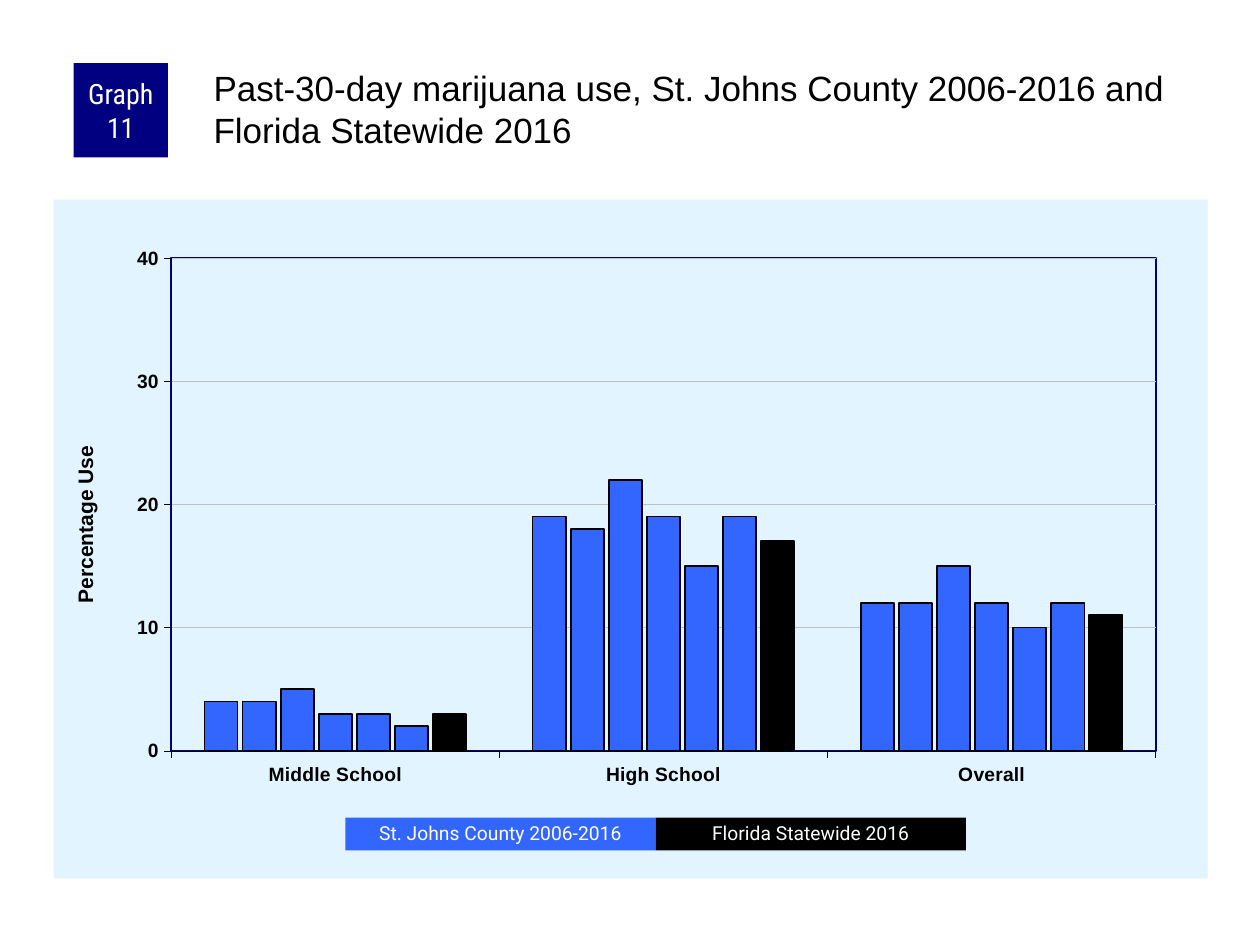
from dataclasses import dataclass

from lxml.etree import SubElement, fromstring
from pptx import Presentation
from pptx.chart.data import CategoryChartData as Data
from pptx.dml.color import RGBColor as Rgb
from pptx.enum.chart import XL_CHART_TYPE as Kind, XL_TICK_MARK as Tick
from pptx.enum.shapes import MSO_SHAPE as Form
from pptx.enum.text import MSO_ANCHOR as Anchor, MSO_AUTO_SIZE as Auto, PP_ALIGN as Align
from pptx.oxml.ns import nsdecls, qn
from pptx.util import Pt


@dataclass(frozen=True)
class Theme:
    """Colours, fonts and type sizes."""
    navy: str = "000080"
    blue: str = "3366FF"
    black: str = "000000"
    white: str = "FFFFFF"
    pale: str = "E1F4FF"
    grey: str = "C0C0C0"
    face: str = "Arial"
    key: str = "Roboto"
    slim: str = "Roboto Condensed"
    head: int = 20
    badge: int = 16
    axis: int = 12
    small: int = 11
    base: int = 8


@dataclass(frozen=True)
class Box:
    """A rectangle in points."""
    x: float
    y: float
    w: float
    h: float

    def spot(self):
        """Return left, top, width and height as lengths."""
        return Pt(self.x), Pt(self.y), Pt(self.w), Pt(self.h)


THEME = Theme()
GROUPS = ["Middle School", "High School", "Overall"]
COUNTY = [
    (4, 19, 12),
    (4, 18, 12),
    (5, 22, 15),
    (3, 19, 12),
    (3, 15, 10),
    (2, 19, 12),
]
STATE = (3, 17, 11)


def style(font, face, size, color, bold=False):
    """Set the face, size, colour and weight of a font."""
    font.name, font.size, font.bold = face, Pt(size), bold
    font.color.rgb = Rgb.from_string(color)


def stroke(line, color, width):
    """Give a line its colour and width."""
    line.color.rgb = Rgb.from_string(color)
    line.width = Pt(width)


def paint(fill, color):
    """Make a fill solid."""
    fill.solid()
    fill.fore_color.rgb = Rgb.from_string(color)


def add_head(slide, box, text):
    """Place the slide title."""
    title = slide.shapes.title
    title.left, title.top, title.width, title.height = box.spot()
    frame = title.text_frame
    frame.text = text
    frame.word_wrap, frame.auto_size = True, Auto.NONE
    frame.vertical_anchor = Anchor.TOP
    frame.margin_left = frame.margin_top = Pt(2)
    frame.margin_right = frame.margin_bottom = 0
    para = frame.paragraphs[0]
    para.alignment = Align.LEFT
    style(para.font, THEME.face, THEME.head, THEME.black)


def add_tag(slide, box, text, color, face, size, pad, gap=1.0):
    """Place a filled rectangle with centred white text."""
    tag = slide.shapes.add_shape(Form.RECTANGLE, *box.spot())
    tag.shadow.inherit = False
    paint(tag.fill, color)
    tag.line.fill.background()
    frame = tag.text_frame
    frame.text = text
    frame.word_wrap, frame.vertical_anchor = True, Anchor.MIDDLE
    frame.margin_left = frame.margin_right = Pt(pad)
    frame.margin_top = frame.margin_bottom = 0
    para = frame.paragraphs[0]
    para.alignment, para.line_spacing = Align.CENTER, gap
    style(para.font, face, size, THEME.white)


def add_key(slide, box, items):
    """Place the legend as equal tags side by side."""
    width = box.w / len(items)
    for i, (text, color) in enumerate(items):
        part = Box(box.x + i * width, box.y, width, box.h)
        add_tag(slide, part, text, color, THEME.key, THEME.small, 7.2, 0.9)


def set_place(node, index, **sides):
    """Give a chart part a manual layout."""
    for old in node.findall(qn("c:layout")):
        node.remove(old)
    layout = fromstring(f"<c:layout {nsdecls('c')}/>")
    manual = SubElement(layout, qn("c:manualLayout"))
    if "w" in sides:
        SubElement(manual, qn("c:layoutTarget")).set("val", "inner")
    for side in "xy":
        SubElement(manual, qn(f"c:{side}Mode")).set("val", "edge")
    for side, value in sides.items():
        SubElement(manual, qn(f"c:{side}")).set("val", str(value))
    node.insert(index, layout)


def look(fill, line):
    """Return shape properties for a chart area."""
    return fromstring(f"<c:spPr {nsdecls('c', 'a')}>{fill}<a:ln {line}</a:ln></c:spPr>")


def solid(color):
    """Return a solid fill as XML."""
    return f'<a:solidFill><a:srgbClr val="{color}"/></a:solidFill>'


def set_axes(chart):
    """Format both axes, the grid and the axis title."""
    for axis in (chart.category_axis, chart.value_axis):
        axis.major_tick_mark, axis.minor_tick_mark = Tick.OUTSIDE, Tick.NONE
        stroke(axis.format.line, THEME.black, 0.25)
        style(axis.tick_labels.font, THEME.face, THEME.small, THEME.black, True)
    axis = chart.value_axis
    axis.minimum_scale, axis.maximum_scale, axis.major_unit = 0, 40, 10
    axis.tick_labels.number_format = "0"
    axis.tick_labels.number_format_is_linked = False
    stroke(axis.major_gridlines.format.line, THEME.grey, 0.25)
    frame = axis.axis_title.text_frame
    frame.text = "Percentage Use"
    style(frame.paragraphs[0].font, THEME.face, THEME.axis, THEME.black, True)
    title = chart._chartSpace.xpath("//c:valAx/c:title")[0]
    turn = title.find(".//" + qn("a:bodyPr"))
    turn.set("rot", "-5400000")
    turn.set("vert", "horz")
    set_place(title, 1, x=0.013, y=0.357)


def add_graph(slide, box):
    """Place the clustered columns."""
    data = Data()
    data.categories = GROUPS
    for i, values in enumerate([*COUNTY, STATE], 1):
        data.add_series(f"Series {i}", values)
    chart = slide.shapes.add_chart(Kind.COLUMN_CLUSTERED, *box.spot(), data).chart
    chart.has_legend = chart.has_title = False
    style(chart.font, THEME.face, THEME.base, THEME.black)
    plot = chart.plots[0]
    plot.vary_by_categories, plot.gap_width, plot.overlap = False, 200, -15
    for i, series in enumerate(plot.series):
        paint(series.format.fill, THEME.blue if i < len(COUNTY) else THEME.black)
        stroke(series.format.line, THEME.black, 1)
    set_axes(chart)
    root = chart._chartSpace
    area = root.xpath("c:chart/c:plotArea")[0]
    set_place(area, 0, x=0.102, y=0.086, w=0.853, h=0.726)
    area.append(look("<a:noFill/>", f'w="{Pt(1)}">{solid(THEME.navy)}'))
    root.find(qn("c:chart")).addnext(look(solid(THEME.pale), "><a:noFill/>"))


def main():
    """Build and save the slide."""
    deck = Presentation()
    deck.slide_width, deck.slide_height = Pt(720), Pt(540)
    slide = deck.slides.add_slide(deck.slide_layouts[5])
    add_graph(slide, Box(30.6, 114, 659.5, 388))
    add_tag(slide, Box(42, 36, 54, 54), "Graph 11", THEME.navy, THEME.slim, THEME.badge, 3.6)
    add_head(slide, Box(120, 36, 570, 60),
             "Past-30-day marijuana use, St. Johns County 2006-2016 and Florida Statewide 2016")
    add_key(slide, Box(197.4, 467.3, 354.5, 18.7),
            [("St. Johns County 2006-2016", THEME.blue), ("Florida Statewide 2016", THEME.black)])
    deck.save("out.pptx")


if __name__ == "__main__":
    main()
